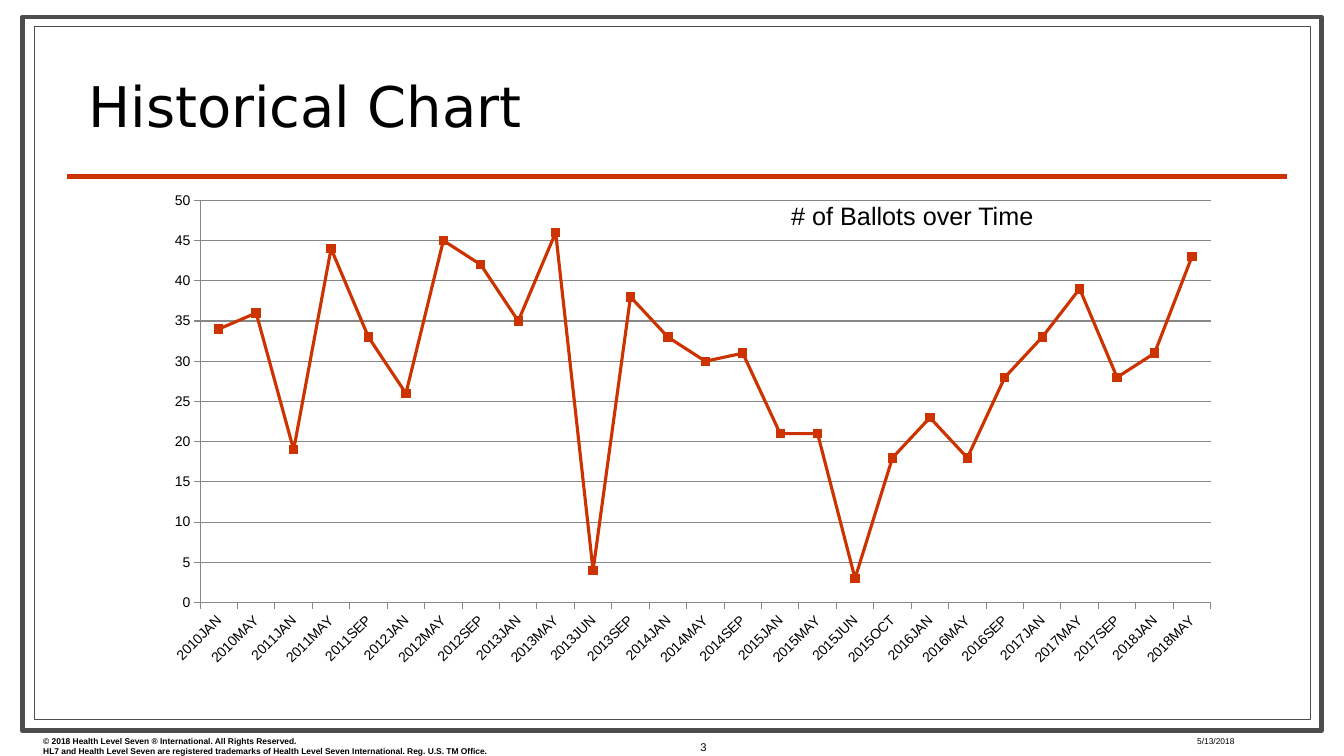
from lxml.etree import SubElement
from pptx import Presentation
from pptx.chart.data import CategoryChartData
from pptx.dml.color import RGBColor
from pptx.enum.chart import XL_CHART_TYPE, XL_MARKER_STYLE, XL_TICK_MARK
from pptx.enum.shapes import MSO_CONNECTOR, MSO_SHAPE
from pptx.enum.text import MSO_ANCHOR, PP_ALIGN
from pptx.oxml import parse_xml
from pptx.oxml.ns import nsdecls, qn
from pptx.util import Cm, Pt

HUES = {"ink": "000000", "paper": "FFFFFF", "frame": "4D4D4D",
        "red": "CC3300", "grid": "878787"}
BALLOTS = {
    "2010JAN": 34, "2010MAY": 36, "2011JAN": 19, "2011MAY": 44, "2011SEP": 33,
    "2012JAN": 26, "2012MAY": 45, "2012SEP": 42, "2013JAN": 35, "2013MAY": 46,
    "2013JUN": 4, "2013SEP": 38, "2014JAN": 33, "2014MAY": 30, "2014SEP": 31,
    "2015JAN": 21, "2015MAY": 21, "2015JUN": 3, "2015OCT": 18, "2016JAN": 23,
    "2016MAY": 18, "2016SEP": 28, "2017JAN": 33, "2017MAY": 39, "2017SEP": 28,
    "2018JAN": 31, "2018MAY": 43,
}


def hue(name):
    return RGBColor.from_string(HUES[name])


def add_text(box, text, size, face="Arial", bold=False):
    """Add a wrapped text box at box (cm) and return its frame."""
    frame = slide.shapes.add_textbox(*map(Cm, box)).text_frame
    frame.word_wrap = True
    frame.text = text
    for para in frame.paragraphs:
        for run in para.runs:
            run.font.size = Pt(size)
            run.font.name = face
            run.font.bold = bold
            run.font.color.rgb = hue("ink")
    return frame


deck = Presentation()
deck.slide_width, deck.slide_height = Cm(33.87), Cm(19.05)
slide = deck.slides.add_slide(deck.slide_layouts[6])

# Double frame
for box, width in [((0.56, 0.43, 32.74, 17.98), 3.5),
                   ((0.86, 0.66, 32.16, 17.48), 0.75)]:
    frame = slide.shapes.add_shape(MSO_SHAPE.RECTANGLE, *map(Cm, box))
    frame.shadow.inherit = False
    frame.fill.solid()
    frame.fill.fore_color.rgb = hue("paper")
    frame.line.color.rgb = hue("frame")
    frame.line.width = Pt(width)

# Rule under the title
rule = slide.shapes.add_connector(
    MSO_CONNECTOR.STRAIGHT, Cm(1.7), Cm(4.45), Cm(32.44), Cm(4.45))
rule.line.color.rgb = hue("red")
rule.line.width = Pt(3)
SubElement(rule._element.spPr, qn("a:effectLst"))

# Texts
add_text((0.84, 18.42, 16.36, 0.76),
         "© 2018 Health Level Seven ® International. All Rights Reserved.\n"
         "HL7 and Health Level Seven are registered trademarks of Health Level "
         "Seven International. Reg. U.S. TM Office.", 6, bold=True)
title = add_text((1.98, 1.32, 30.2, 2.29), "Historical Chart", 40, "DejaVu Sans")
title.vertical_anchor = MSO_ANCHOR.BOTTOM
title.paragraphs[0].line_spacing = 0.8
add_text((29.92, 18.42, 3.1, 0.43), "5/13/2018", 6)
page = add_text((16.08, 18.16, 1.98, 1.32), "3", 8)
page.vertical_anchor = MSO_ANCHOR.MIDDLE
page.paragraphs[0].alignment = PP_ALIGN.RIGHT
add_text((19.69, 4.93, 9.96, 1.02), "# of Ballots over Time", 18)

# Chart
data = CategoryChartData()
data.categories = list(BALLOTS)
data.add_series("Series 1", list(BALLOTS.values()))
chart = slide.shapes.add_chart(
    XL_CHART_TYPE.LINE_MARKERS, Cm(2.74), Cm(4.45), Cm(28.78), Cm(14.61),
    data).chart
chart.has_title = False
chart.has_legend = False
chart.font.size = Pt(10)
chart.font.name = "Arial"
chart.font.color.rgb = hue("ink")

plot = chart.plots[0]
plot.vary_by_categories = False
line = plot.series[0]
line.smooth = False
line.format.line.color.rgb = hue("red")
line.format.line.width = Pt(2.25)
line.marker.style = XL_MARKER_STYLE.SQUARE
line.marker.size = 6
line.marker.format.fill.solid()
line.marker.format.fill.fore_color.rgb = hue("red")
line.marker.format.line.color.rgb = hue("red")

dates, counts = chart.category_axis, chart.value_axis
counts.minimum_scale, counts.maximum_scale = 0, 50
counts.major_unit = 5
counts.has_major_gridlines = True
for axis in (dates, counts):
    axis.major_tick_mark = XL_TICK_MARK.OUTSIDE
    axis.minor_tick_mark = XL_TICK_MARK.NONE
    axis.tick_labels.font.size = Pt(10)
for part in (dates, counts, counts.major_gridlines):
    part.format.line.color.rgb = hue("grid")
    part.format.line.width = Pt(0.75)
dates._element.find(qn("c:txPr")).find(qn("a:bodyPr")).set("rot", "-2700000")

# Fixed plot area on a clear background
space = chart._chartSpace
area = space.find(qn("c:chart")).find(qn("c:plotArea"))
for old in area.findall(qn("c:layout")):
    area.remove(old)
layout = parse_xml(f"<c:layout {nsdecls('c')}><c:manualLayout/></c:layout>")
for tag, val in [("layoutTarget", "inner"), ("xMode", "edge"), ("yMode", "edge"),
                 ("x", 0.08), ("y", 0.041), ("w", 0.885), ("h", 0.694)]:
    SubElement(layout[0], qn(f"c:{tag}")).set("val", str(val))
area.insert(0, layout)
space.find(qn("c:txPr")).addprevious(parse_xml(
    f"<c:spPr {nsdecls('c', 'a')}><a:noFill/><a:ln><a:noFill/></a:ln></c:spPr>"))

deck.save("out.pptx")
